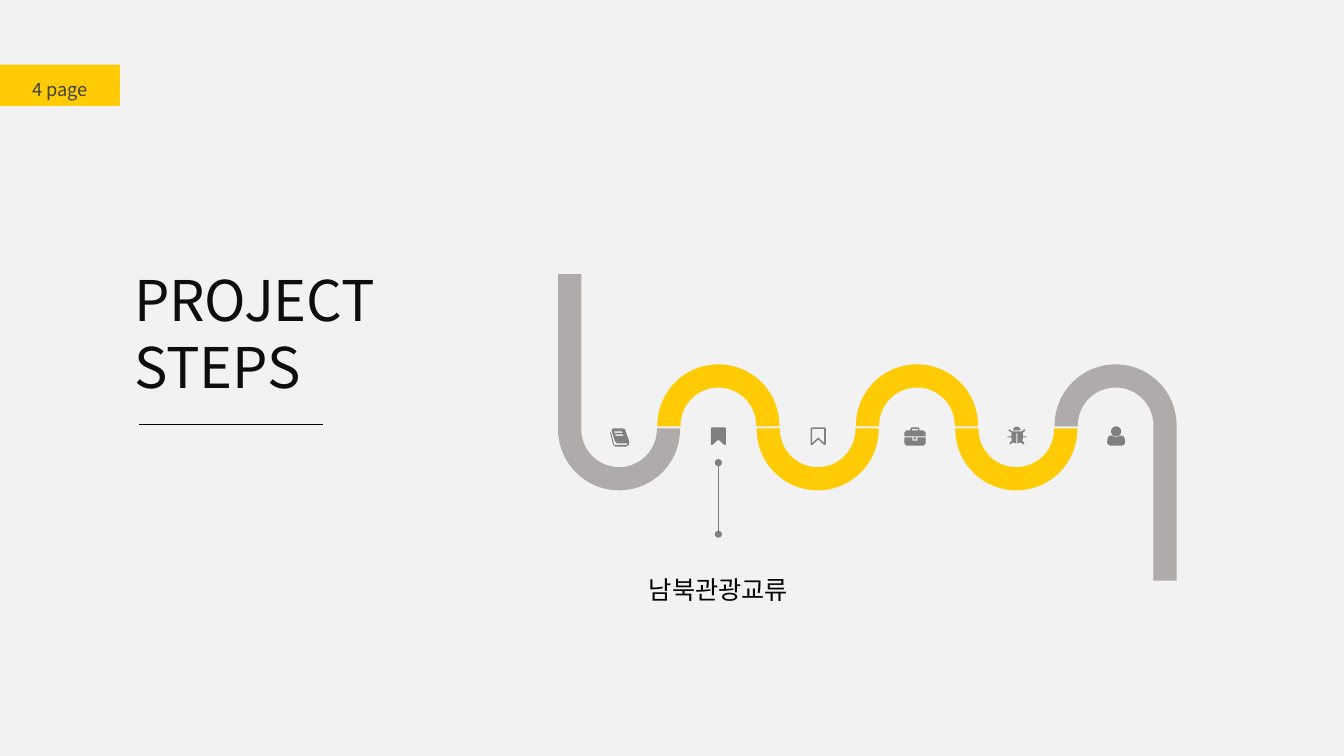
from math import cos, pi, sin

from pptx import Presentation
from pptx.dml.color import RGBColor
from pptx.enum.shapes import MSO_CONNECTOR, MSO_SHAPE
from pptx.enum.text import MSO_ANCHOR, PP_ALIGN
from pptx.oxml.ns import qn
from pptx.util import Inches, Pt
from lxml.etree import SubElement

COLORS = {"paper": "F2F2F2", "yellow": "FFCB05", "road": "AFABAB", "icon": "808080",
          "title": "0D0D0D", "page": "404040", "black": "000000"}
FONT = "Noto Sans CJK KR"

# Road grid: one column per step, bends meeting at mid height
FIRST, PITCH = 6.14, 0.985
OUTER, INNER = 0.605, 0.375
CREST_BASE, DIP_BASE = 4.23, 4.25
STEP_COLORS = ["road", "yellow", "yellow", "yellow", "yellow", "road"]


def arc(cx, cy, r, start, end, steps=36):
    """Points on a circle between two angles given in half turns."""
    angles = [pi * (start + (end - start) * i / steps) for i in range(steps + 1)]
    return [(cx + r * cos(a), cy + r * sin(a)) for a in angles]


# Icon outlines in hundredths of an inch, relative to the left top corner
BOOKMARK = [(0, 1), (1, 0), (14, 0), (15, 1), (15, 17), (13.5, 17.5),
            (7.5, 12), (1.5, 17.5), (0, 17)]
ICONS = [
    # book
    (6.05, 4.25, [
        [(0, 4), (3, 16), (5, 18), (16, 18), (19, 16), (19, 13), (15, 1), (13, 0),
         (3, 0), (1.5, 2), (5, 13), (7, 15), (17, 15), (18, 15.5), (16, 16.5),
         (5, 16.5), (4, 16), (1, 4)],
        [(4, 3), (12, 3), (12.5, 4.5), (4.5, 4.5)],
        [(5, 6), (13, 6), (13.5, 7.5), (5.5, 7.5)]]),
    # filled and open bookmarks
    (7.05, 4.24, [BOOKMARK]),
    (8.04, 4.24, [BOOKMARK, [(1.5, 1.5), (13.5, 1.5), (13.5, 15.5), (7.5, 10), (1.5, 15.5)]]),
    # briefcase
    (8.97, 4.24, [
        [(0, 9), (0, 5), (2, 3), (6, 3), (6, 1), (7, 0), (14, 0), (15, 1), (15, 3),
         (19, 3), (21, 5), (21, 9)],
        [(7.5, 1.5), (13.5, 1.5), (13.5, 3), (7.5, 3)],
        [(0, 10), (8, 10), (8, 13), (13, 13), (13, 10), (21, 10), (21, 16), (19, 18),
         (2, 18), (0, 16)],
        [(9, 10), (12, 10), (12, 12), (9, 12)]]),
    # bug
    (9.99, 4.23, [
        [(0, 10), (4, 10), (4, 6), (1, 4), (2, 3), (5, 5), (14, 5), (17, 3), (18, 4),
         (15.5, 6), (15.5, 10), (19, 10), (19, 11), (15.5, 11), (15, 14), (17, 17),
         (16, 18), (13.5, 16), (10, 17), (10, 7), (9, 7), (9, 17), (5.5, 16), (3, 18),
         (2, 17), (4.5, 14), (4, 11), (0, 11)],
        arc(9.5, 4, 3.7, 1, 2)]),
    # person
    (10.98, 4.23, [
        arc(9, 5, 5, 0, 2),
        [(0, 16), (0.5, 12), (2, 9.5), (4, 9), (9, 11), (14, 9), (16, 9.5),
         (17.5, 12), (18, 16), (17, 18), (15, 19), (3, 19), (1, 18)]]),
]


def rgb(name):
    return RGBColor.from_string(COLORS[name])


def paint(sp, color):
    sp.fill.solid()
    sp.fill.fore_color.rgb = rgb(color)
    sp.line.fill.background()
    sp.shadow.inherit = False


def add_block(slide, kind, x, y, w, h, color):
    sp = slide.shapes.add_shape(kind, Inches(x), Inches(y), Inches(w), Inches(h))
    paint(sp, color)


def add_outline(slide, contours, color):
    """Fill closed contours given in inches; inner contours become holes."""
    paths = [[(Inches(x), Inches(y)) for x, y in c] for c in contours]
    builder = slide.shapes.build_freeform(*paths[0][0])
    builder.add_line_segments(paths[0][1:])
    for points in paths[1:]:
        builder.move_to(*points[0])
        builder.add_line_segments(points[1:])
    paint(builder.convert_to_shape(), color)


def add_bend(slide, cx, crest, color, left=None, right=None):
    """Half ring whose legs end at the base line, or at the heights given."""
    base = CREST_BASE if crest else DIP_BASE
    cy = base - 0.01 if crest else base + 0.01
    far = 2 if crest else 0
    left, right = left or base, right or base
    points = [(cx - OUTER, left), *arc(cx, cy, OUTER, 1, far), (cx + OUTER, right),
              (cx + INNER, right), *arc(cx, cy, INNER, far, 1), (cx - INNER, left)]
    add_outline(slide, [points], color)


def add_line(slide, x1, y1, x2, y2, color):
    line = slide.shapes.add_connector(MSO_CONNECTOR.STRAIGHT, Inches(x1), Inches(y1),
                                      Inches(x2), Inches(y2))
    line.line.color.rgb = rgb(color)
    line.line.width = Pt(0.5)
    SubElement(line._element.spPr, qn("a:effectLst"))


def set_text(sp, text, *, size, color, leading, align=PP_ALIGN.LEFT, inset=(0.1, 0.05)):
    tf = sp.text_frame
    tf.word_wrap = True
    tf.vertical_anchor = MSO_ANCHOR.TOP
    tf.margin_left = tf.margin_right = Inches(inset[0])
    tf.margin_top = tf.margin_bottom = Inches(inset[1])
    tf.text = text
    for p in tf.paragraphs:
        p.alignment = align
        p.line_spacing = Pt(leading)
        p.space_before = Pt(0)
        for r in p.runs:
            r.font.size, r.font.name = Pt(size), FONT
            r.font.color.rgb = rgb(color)
            SubElement(r.font._element, qn("a:ea"), typeface=FONT)


def add_text(slide, text, x, y, w, h, **fmt):
    set_text(slide.shapes.add_textbox(Inches(x), Inches(y), Inches(w), Inches(h)), text, **fmt)


def main():
    prs = Presentation()
    prs.slide_width, prs.slide_height = Inches(13.33), Inches(7.5)
    slide = prs.slides.add_slide(prs.slide_layouts[5])
    slide.background.fill.solid()
    slide.background.fill.fore_color.rgb = rgb("paper")

    # Page tag
    add_block(slide, MSO_SHAPE.RECTANGLE, 0, 0.64, 1.19, 0.41, "yellow")
    add_text(slide, "4 page", 0.22, 0.61, 0.81, 0.39, size=13, color="page", leading=24)

    # Title and rule
    title = slide.shapes.title
    title.left, title.top = Inches(1.23), Inches(2.58)
    title.width, title.height = Inches(3.62), Inches(1.45)
    set_text(title, "PROJECT\nSTEPS", size=40, color="title", leading=48)
    add_line(slide, 1.38, 4.21, 3.2, 4.21, "black")

    # Winding road: dips and crests alternate
    legs = {0: {"left": 2.72}, len(STEP_COLORS) - 1: {"right": 5.76}}
    for i, color in enumerate(STEP_COLORS):
        add_bend(slide, FIRST + i * PITCH, i % 2 == 1, color, **legs.get(i, {}))

    # Step icons
    for left, top, contours in ICONS:
        add_outline(slide, [[(left + x / 100, top + y / 100) for x, y in c]
                            for c in contours], "icon")

    # Callout under the second step
    x, dot = FIRST + PITCH, 0.07
    add_line(slide, x, 4.59, x, 5.3, "icon")
    for y in (4.59, 5.3):
        add_block(slide, MSO_SHAPE.OVAL, x - dot / 2, y - dot / 2, dot, dot, "icon")
    add_text(slide, "남북관광교류", 6.33, 5.5, 1.59, 0.79, size=18, color="black",
             leading=33, align=PP_ALIGN.CENTER, inset=(0.04, 0.04))

    prs.save("out.pptx")


if __name__ == "__main__":
    main()
